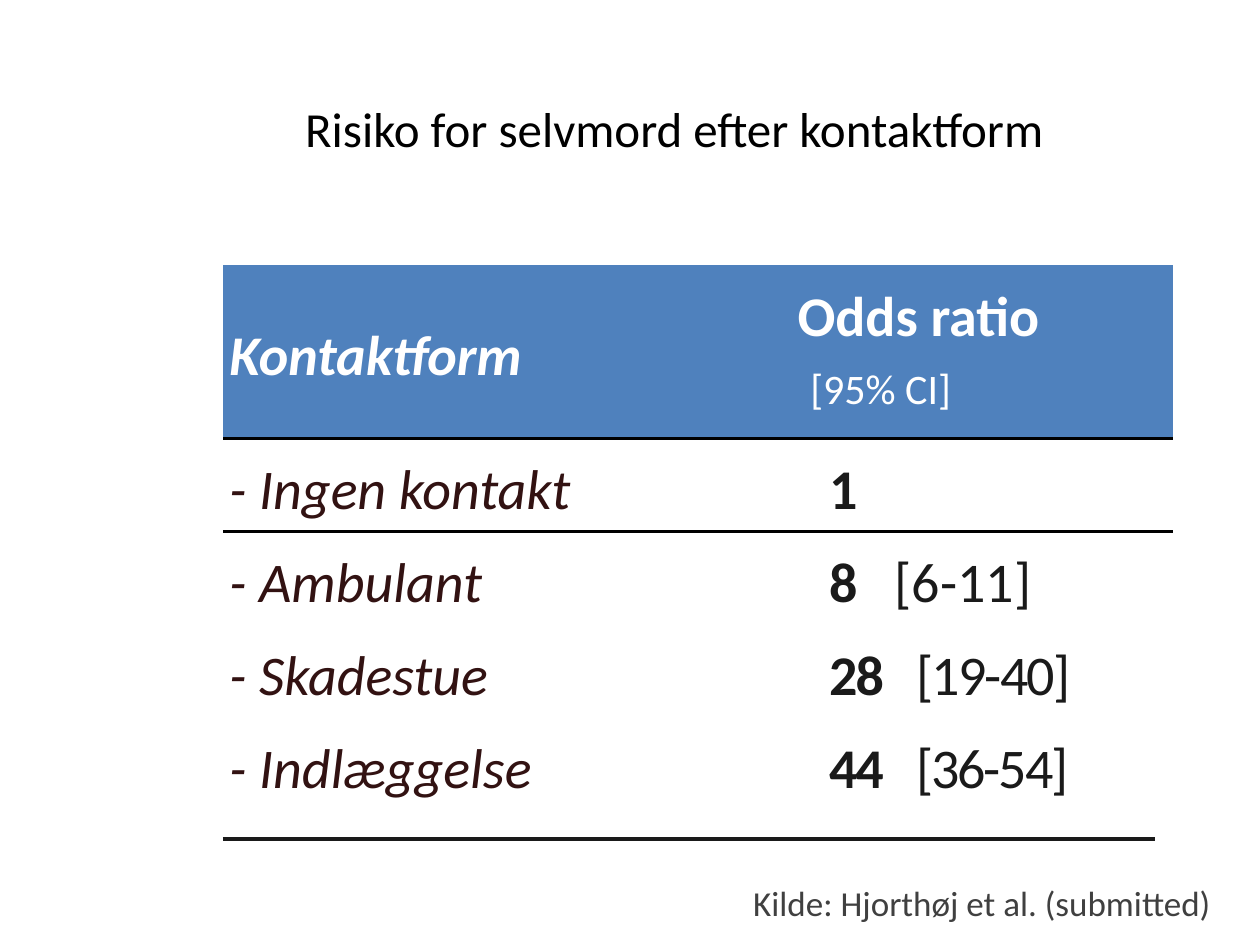
from lxml import etree
from pptx import Presentation
from pptx.dml.color import RGBColor
from pptx.enum.shapes import MSO_CONNECTOR
from pptx.enum.text import MSO_ANCHOR, PP_ALIGN
from pptx.oxml.ns import qn
from pptx.util import Inches, Pt

LINE = MSO_CONNECTOR.STRAIGHT
MID, TOP = MSO_ANCHOR.MIDDLE, MSO_ANCHOR.TOP
MID_ALIGN, LEFT = PP_ALIGN.CENTER, PP_ALIGN.LEFT
PLAIN = "{2D5ABB26-0587-4C30-8999-92F81FD0307C}"
COLORS = {"black": "000000", "white": "FFFFFF", "blue": "4F81BD",
          "wine": "321212", "dark": "1A1A1A", "gray": "404040"}
ROWS = [
    ("- Ingen kontakt", "1", "", 0, 0),
    ("- Ambulant", "8", "[6-11]", 0, 0.52),
    ("- Skadestue", "28", "[19-40]", -1, 0.69),
    ("- Indlæggelse", "44", "[36-54]", -1.2, 0.69),
]


def rgb(name):
    return RGBColor.from_string(COLORS[name])


def add_run(para, text, size, color, bold=False, italic=False, space=0):
    run = para.add_run()
    run.text = text
    font = run.font
    font.name, font.size = "Calibri", Pt(size)
    font.bold, font.italic = bold, italic
    font.color.rgb = rgb(color)
    if space:
        font._element.set("spc", str(round(space * 100)))


def add_text(slide, box, text, size, color, align=LEFT, anchor=TOP):
    frame = slide.shapes.add_textbox(*map(Inches, box)).text_frame
    frame.word_wrap = True
    frame.vertical_anchor = anchor
    para = frame.paragraphs[0]
    para.alignment = align
    add_run(para, text, size, color)


def add_rule(slide, left, right, y):
    rule = slide.shapes.add_connector(
        LINE, Inches(left), Inches(y), Inches(right), Inches(y))
    rule.line.color.rgb = rgb("dark")
    rule.line.width = Pt(2.5)
    etree.SubElement(rule._element.spPr, qn("a:effectLst"))


def set_edge(cell, side):
    edge = etree.SubElement(cell._tc.get_or_add_tcPr(), qn("a:ln" + side),
                            w=str(Pt(2.25)))
    fill = etree.SubElement(edge, qn("a:solidFill"))
    etree.SubElement(fill, qn("a:srgbClr"), val=COLORS["black"])


def set_tab(para, pos):
    tabs = etree.SubElement(para._p.get_or_add_pPr(), qn("a:tabLst"))
    etree.SubElement(tabs, qn("a:tab"), pos=str(Inches(pos)), algn="l")


def style_cell(cell, left=0.05):
    cell.vertical_anchor = MID
    cell.margin_left, cell.margin_right = Inches(left), Inches(0.05)
    cell.margin_top = cell.margin_bottom = 0
    para = cell.text_frame.paragraphs[0]
    para.line_spacing = 1.15
    return para


def fill_head(table):
    name, odds = table.cell(0, 0), table.cell(0, 1)
    add_run(style_cell(name), "Kontaktform", 32, "white", True, True)
    para = style_cell(odds)
    para.line_spacing = 1.0
    add_run(para, "Odds ratio", 32, "white", True)
    para = odds.text_frame.add_paragraph()
    add_run(para, " ", 32, "white")
    add_run(para, "[95% CI]", 24, "white")
    for cell in (name, odds):
        set_edge(cell, "B")
        cell.fill.solid()
        cell.fill.fore_color.rgb = rgb("blue")


def fill_row(table, row, name, odds, span, space, tab):
    left, right = table.cell(row, 0), table.cell(row, 1)
    add_run(style_cell(left), name, 32, "wine", italic=True)
    para = style_cell(right, 0.3)
    add_run(para, odds, 32, "dark", True, space=space)
    if span:
        set_tab(para, tab)
        add_run(para, "\t" + span, 32, "dark", space=space)
    for cell in (left, right):
        if row == 1:
            set_edge(cell, "T")
        cell.fill.background()


def add_grid(slide):
    box = map(Inches, (1.77, 2.1, 7.54, 4.33))
    table = slide.shapes.add_table(len(ROWS) + 1, 2, *box).table
    table.horz_banding = False
    table._tbl.tblPr.find(qn("a:tableStyleId")).text = PLAIN
    for col, width in zip(table.columns, (4.51, 3.03)):
        col.width = Inches(width)
    for num, row in enumerate(table.rows):
        row.height = Inches(0.74 if num else 1.38)
    fill_head(table)
    for num, row in enumerate(ROWS, 1):
        fill_row(table, num, *row)


def main():
    deck = Presentation()
    deck.slide_width, deck.slide_height = Inches(10), Inches(7.5)
    slide = deck.slides.add_slide(deck.slide_layouts[6])
    add_text(slide, (1.39, 0.6, 7.92, 0.83),
             "Risiko for selvmord efter kontaktform", 28, "black", MID_ALIGN, MID)
    add_grid(slide)
    add_text(slide, (5.88, 6.95, 4.16, 0.44),
             "Kilde: Hjorthøj et al. (submitted)", 20, "gray")
    add_rule(slide, 1.77, 9.17, 6.66)
    deck.save("out.pptx")


if __name__ == "__main__":
    main()
